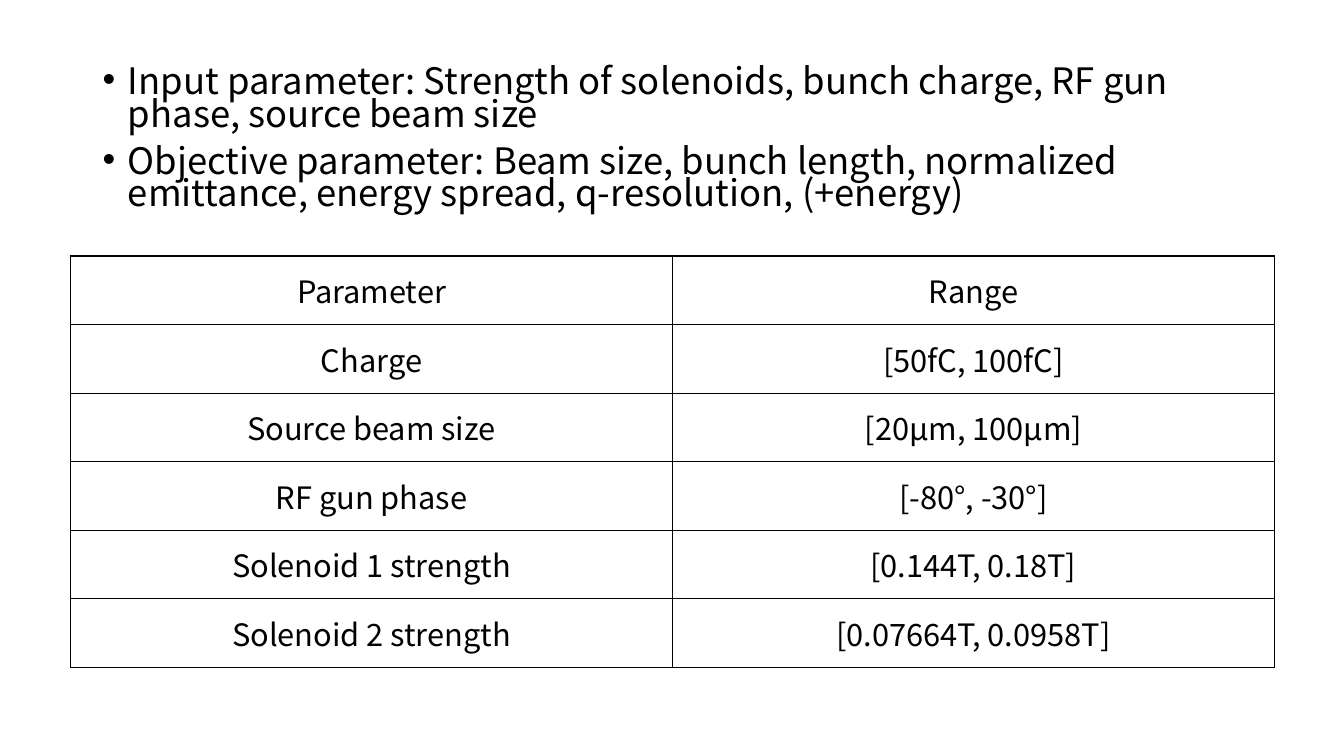
import pptx
import pptx.util
import pptx.dml.color
import pptx.enum.text
import pptx.oxml.ns
from lxml import etree

Inches, Pt = pptx.util.Inches, pptx.util.Pt
COLORS = {"text": "000000", "line": "000000", "cell": "FFFFFF"}
FONT = "Noto Sans CJK KR"

NOTES = [
    "Input parameter: Strength of solenoids, bunch charge, RF gun phase, source beam size",
    "Objective parameter: Beam size, bunch length, normalized emittance, "
    "energy spread, q-resolution, (+energy)",
]
RANGES = [
    ("Parameter", "Range"),
    ("Charge", "[50fC, 100fC]"),
    ("Source beam size", "[20μm, 100μm]"),
    ("RF gun phase", "[-80°, -30°]"),
    ("Solenoid 1 strength", "[0.144T, 0.18T]"),
    ("Solenoid 2 strength", "[0.07664T, 0.0958T]"),
]


def color(name):
    return pptx.dml.color.RGBColor.from_string(COLORS[name])


def add(parent, tag, **attrs):
    return etree.SubElement(parent, pptx.oxml.ns.qn(tag), attrs)


def style(para, size):
    for run in para.runs:
        run.font.size = Pt(size)
        run.font.name = FONT
        run.font.color.rgb = color("text")
        add(run.font._element, "a:ea", typeface=FONT)


def bullets(slide, left, top, width, height):
    box = slide.shapes.add_textbox(*map(Inches, (left, top, width, height)))
    frame = box.text_frame
    frame.word_wrap = True
    frame.text = "\n".join(NOTES)
    for para in frame.paragraphs:
        para.line_spacing = 0.75
        para.space_before = Pt(10)
        props = para._p.get_or_add_pPr()
        props.set("marL", str(Inches(0.25)))
        props.set("indent", str(-Inches(0.25)))
        add(props, "a:buFont", typeface="Arial")
        add(props, "a:buChar", char="•")
        style(para, 26)


def border(cell):
    """Draw a thin line on all four sides, ahead of the cell's fill."""
    props = cell._tc.get_or_add_tcPr()
    for side in ("a:lnL", "a:lnR", "a:lnT", "a:lnB"):
        line = add(props, side, w=str(Pt(1)))
        fill = add(line, "a:solidFill")
        add(fill, "a:srgbClr", val=COLORS["line"])


def grid(slide, left, top, width, height):
    frame = slide.shapes.add_table(
        len(RANGES), 2, *map(Inches, (left, top, width, height)))
    table = frame.table
    table.first_row = table.horz_banding = False
    for row, texts in enumerate(RANGES):
        for col, text in enumerate(texts):
            cell = table.cell(row, col)
            cell.text = text
            cell.vertical_anchor = pptx.enum.text.MSO_ANCHOR.MIDDLE
            border(cell)
            cell.fill.solid()
            cell.fill.fore_color.rgb = color("cell")
            para = cell.text_frame.paragraphs[0]
            para.alignment = pptx.enum.text.PP_ALIGN.CENTER
            style(para, 22)


def main():
    deck = pptx.Presentation()
    deck.slide_width, deck.slide_height = Inches(13.33), Inches(7.5)
    slide = deck.slides.add_slide(deck.slide_layouts[6])
    bullets(slide, 0.92, 0.63, 11.5, 6.13)
    grid(slide, 0.7, 2.54, 11.94, 4.08)
    deck.save("out.pptx")


if __name__ == "__main__":
    main()
